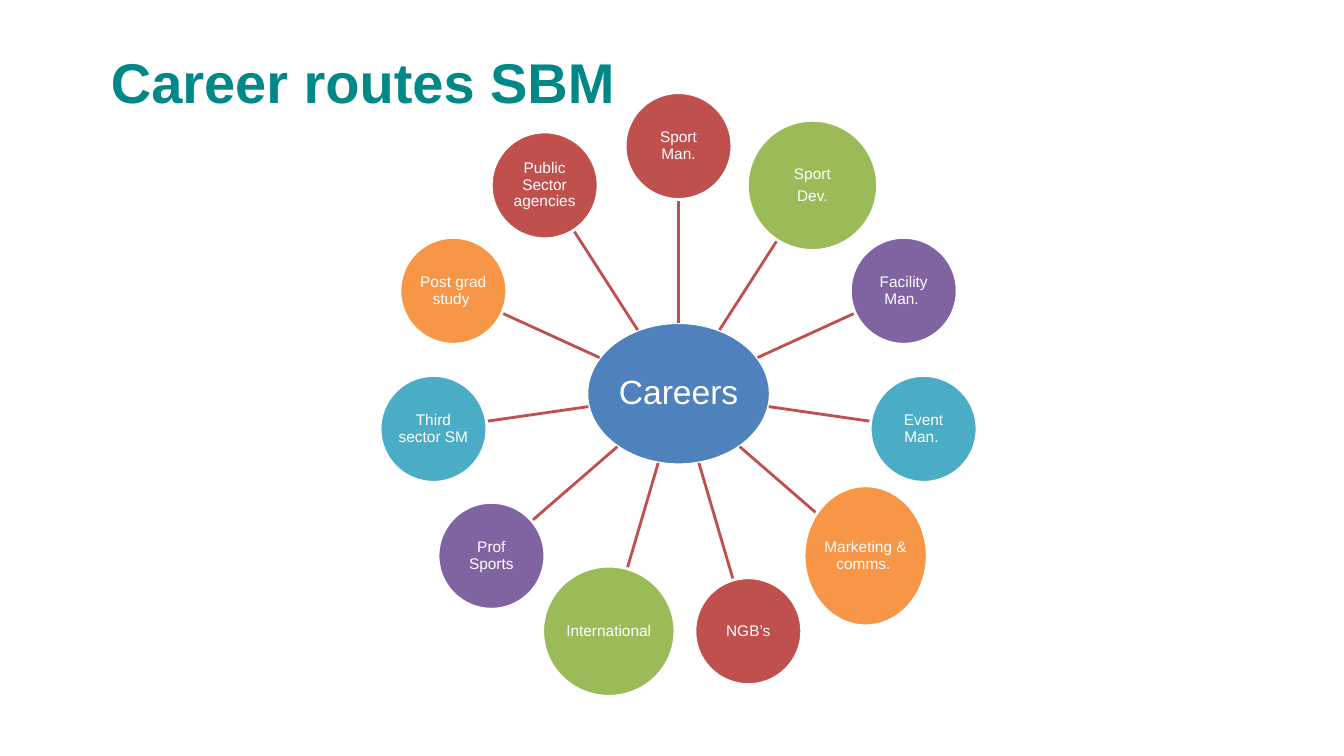
import math

import pptx
import pptx.dml.color
import pptx.enum.shapes
import pptx.enum.text
import pptx.oxml
import pptx.oxml.ns
import pptx.util

Pt = pptx.util.Pt
RGBColor = pptx.dml.color.RGBColor
ALIGN = pptx.enum.text.PP_ALIGN

TEAL = RGBColor(0x00, 0x87, 0x88)
WHITE = RGBColor(0xFF, 0xFF, 0xFF)
BLUE = RGBColor(0x4F, 0x81, 0xBD)
RED = RGBColor(0xC0, 0x50, 0x4D)
GREEN = RGBColor(0x9B, 0xBB, 0x59)
PURPLE = RGBColor(0x80, 0x64, 0xA2)
AQUA = RGBColor(0x4B, 0xAC, 0xC6)
ORANGE = RGBColor(0xF7, 0x96, 0x46)

ACCENTS = [RED, GREEN, PURPLE, AQUA, ORANGE]
HUB_SIZE = (131, 101.5)
ROUTE_SIZE = (76.3, 76.3)
ROUTES = [
    ("Sport Man.", ROUTE_SIZE),
    ("Sport\nDev.", (93, 93)),
    ("Facility Man. ", ROUTE_SIZE),
    ("Event Man. ", ROUTE_SIZE),
    ("Marketing & comms. ", (88, 100)),
    ("NGB’s", ROUTE_SIZE),
    ("International", (94.5, 93)),
    ("Prof Sports", ROUTE_SIZE),
    ("Third sector SM", ROUTE_SIZE),
    ("Post grad study ", ROUTE_SIZE),
    ("Public Sector agencies", ROUTE_SIZE),
]


def write_text(frame, text, *, size, color, bold=False, align=ALIGN.LEFT,
               line_spacing=1.0, space_after=0):
    frame.word_wrap = True
    frame.auto_size = pptx.enum.text.MSO_AUTO_SIZE.NONE
    frame.vertical_anchor = pptx.enum.text.MSO_ANCHOR.MIDDLE
    for index, line in enumerate(text.split("\n")):
        para = frame.add_paragraph() if index else frame.paragraphs[0]
        para.alignment = align
        para.line_spacing = line_spacing
        para.space_before = Pt(0)
        para.space_after = Pt(space_after)
        span = para.add_run()
        span.text = line
        span.font.name = "Arial"
        span.font.size = Pt(size)
        span.font.bold = bold
        span.font.color.rgb = color


def add_title(page, left, top, width, height):
    title = page.shapes.title
    title.left, title.top = Pt(left), Pt(top)
    title.width, title.height = Pt(width), Pt(height)
    write_text(title.text_frame, "Career routes SBM", size=40, color=TEAL, bold=True)


def add_bubble(page, center, size, text, fill, font_size, margin):
    x, y = center
    width, height = size
    bubble = page.shapes.add_shape(
        pptx.enum.shapes.MSO_SHAPE.OVAL,
        Pt(x - width / 2), Pt(y - height / 2), Pt(width), Pt(height))
    bubble.shadow.inherit = False
    bubble.fill.solid()
    bubble.fill.fore_color.rgb = fill
    bubble.line.color.rgb = WHITE
    bubble.line.width = Pt(2)
    frame = bubble.text_frame
    frame.margin_left = frame.margin_right = Pt(margin)
    frame.margin_top = frame.margin_bottom = Pt(margin)
    write_text(frame, text, size=font_size, color=WHITE, align=ALIGN.CENTER,
               line_spacing=0.9, space_after=font_size * 0.35)


def point_at(center, angle, distance):
    return (center[0] + distance * math.sin(angle),
            center[1] - distance * math.cos(angle))


def edge_distance(size, angle):
    width, height = size
    return 0.5 / math.hypot(math.sin(angle) / width, math.cos(angle) / height)


def add_spoke(page, start, end):
    spoke = page.shapes.add_connector(
        pptx.enum.shapes.MSO_CONNECTOR.STRAIGHT,
        Pt(start[0]), Pt(start[1]), Pt(end[0]), Pt(end[1]))
    spoke.line.color.rgb = RED
    spoke.line.width = Pt(2)
    properties = spoke.element.find(pptx.oxml.ns.qn("p:spPr"))
    properties.append(pptx.oxml.parse_xml(
        f"<a:effectLst {pptx.oxml.ns.nsdecls('a')}/>"))


def add_career_wheel(page, left, top, width, height):
    center = (left + width / 2, top + height / 2)
    radius = (height - ROUTE_SIZE[1]) / 2
    add_bubble(page, center, HUB_SIZE, "Careers", BLUE, 24, 1.4)
    for index, (text, size) in enumerate(ROUTES):
        angle = 2 * math.pi * index / len(ROUTES)
        add_spoke(page,
                  point_at(center, angle, edge_distance(HUB_SIZE, angle)),
                  point_at(center, angle, radius - edge_distance(size, angle)))
        add_bubble(page, point_at(center, angle, radius), size, text,
                   ACCENTS[index % len(ACCENTS)], 11, 0.7)


def main():
    deck = pptx.Presentation()
    deck.slide_width, deck.slide_height = Pt(960), Pt(540)
    page = deck.slides.add_slide(deck.slide_layouts[5])
    add_title(page, 72, 21, 869, 73.4)
    add_career_wheel(page, 269.7, 66.2, 430, 430)
    deck.save("out.pptx")


if __name__ == "__main__":
    main()
